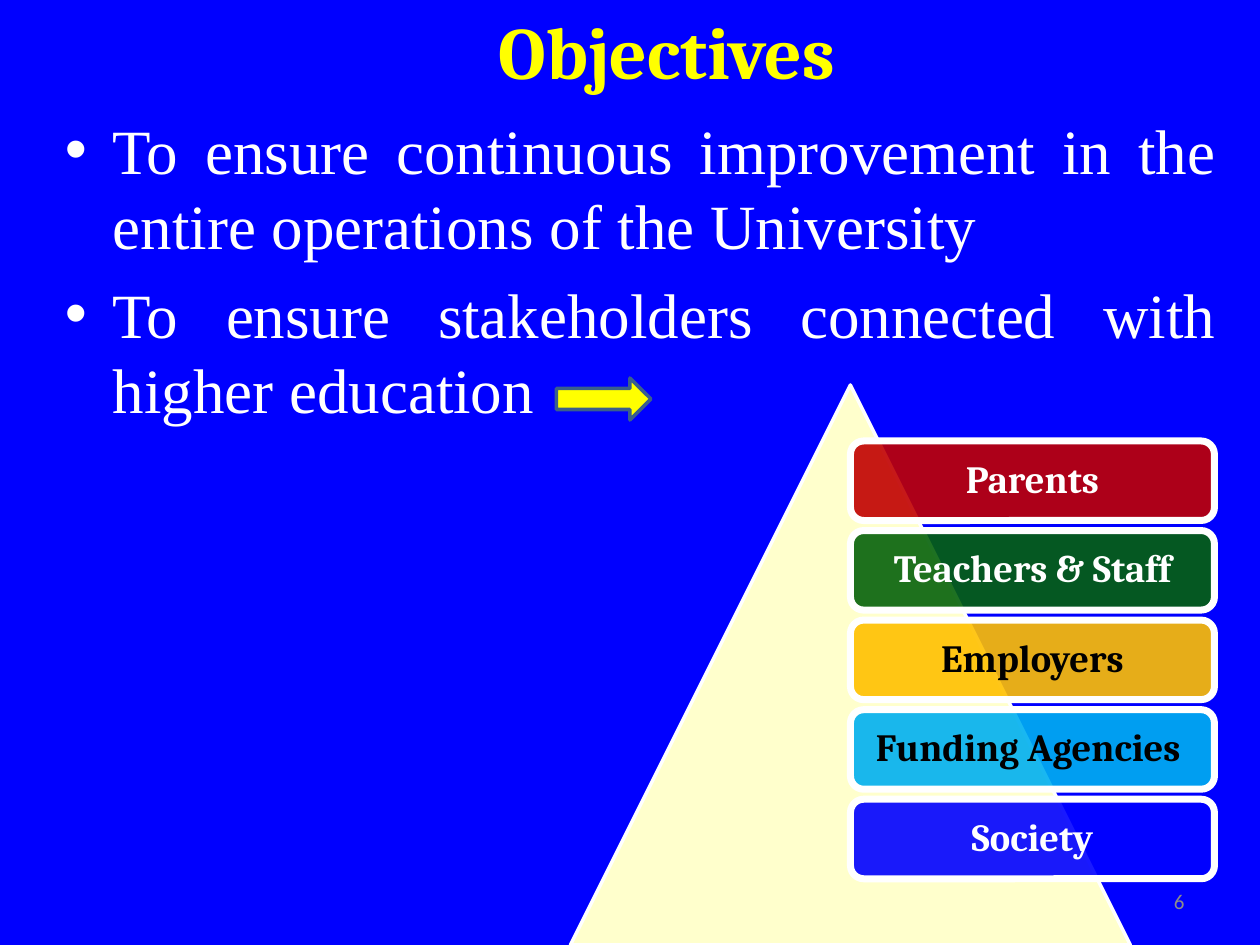
from pptx import Presentation
from pptx.dml.color import RGBColor
from pptx.enum.shapes import MSO_SHAPE as SHAPE
from pptx.enum.text import MSO_ANCHOR as ANCHOR, PP_ALIGN as ALIGN
from pptx.oxml.ns import qn
from pptx.util import Inches, Pt
from lxml.etree import SubElement

BLUE = RGBColor(0x00, 0x00, 0xFF)
WHITE = RGBColor(0xFF, 0xFF, 0xFF)
BLACK = RGBColor(0x00, 0x00, 0x00)
YELLOW = RGBColor(0xFF, 0xFF, 0x00)
CREAM = RGBColor(0xFF, 0xFF, 0xCC)
GREY = RGBColor(0x8C, 0x8C, 0x8C)
STEEL = RGBColor(0x3A, 0x5F, 0x8C)
RED = RGBColor(0xC0, 0x00, 0x00)
GREEN = RGBColor(0x06, 0x62, 0x0A)
AMBER = RGBColor(0xFF, 0xC0, 0x00)
SKY = RGBColor(0x00, 0xB0, 0xF0)

OBJECTIVES = [
    "To ensure continuous improvement in the entire operations of the University",
    "To ensure stakeholders connected with higher education ",
]
STAKEHOLDERS = [
    ("Parents", RED, WHITE),
    ("Teachers & Staff", GREEN, WHITE),
    ("Employers", AMBER, BLACK),
    ("Funding Agencies ", SKY, BLACK),
    ("Society", BLUE, WHITE),
]


class Deck:
    """Draws styled elements on a slide with a grid of 120 columns by 90 rows."""

    HEADING, BODY, SMALL = "Cambria", "Times New Roman", "Calibri"

    def __init__(self):
        self.prs = Presentation()
        self.prs.slide_width, self.prs.slide_height = Inches(10), Inches(7.5)
        self.s = None

    def new_slide(self, color):
        self.s = self.prs.slides.add_slide(self.prs.slide_layouts[6])
        fill = self.s.background.fill
        fill.solid()
        fill.fore_color.rgb = color

    def place(self, col, row, cols, rows):
        x, y = self.prs.slide_width / 120, self.prs.slide_height / 90
        return [round(v) for v in (col * x, row * y, cols * x, rows * y)]

    def run(self, p, text, font, size, color, align, bold=False):
        p.alignment = align
        r = p.add_run()
        r.text = text
        r.font.name, r.font.size, r.font.bold = font, Pt(size), bold
        r.font.color.rgb = color

    def text(self, box, text, font, size, color, align, bold=False, anchor=ANCHOR.TOP):
        tf = self.s.shapes.add_textbox(*self.place(*box)).text_frame
        tf.word_wrap, tf.vertical_anchor = True, anchor
        self.run(tf.paragraphs[0], text, font, size, color, align, bold)

    def bullets(self, box, items, size, color):
        tf = self.s.shapes.add_textbox(*self.place(*box)).text_frame
        tf.word_wrap = True
        for i, item in enumerate(items):
            p = tf.add_paragraph() if i else tf.paragraphs[0]
            self.run(p, item, self.BODY, size, color, ALIGN.JUSTIFY)
            pPr = p._p.get_or_add_pPr()
            pPr.set("marL", str(Inches(0.38)))
            pPr.set("indent", str(-Inches(0.38)))
            before = SubElement(pPr, qn("a:spcBef"))
            SubElement(before, qn("a:spcPct")).set("val", "20000")
            SubElement(pPr, qn("a:buFont")).set("typeface", "Arial")
            SubElement(pPr, qn("a:buChar")).set("char", "•")

    def shape(self, kind, box, fill, line, width):
        sp = self.s.shapes.add_shape(kind, *self.place(*box))
        sp.shadow.inherit = False
        sp.fill.solid()
        sp.fill.fore_color.rgb = fill
        sp.line.color.rgb, sp.line.width = line, Pt(width)
        return sp

    def card(self, box, text, fill, color):
        sp = self.shape(SHAPE.ROUNDED_RECTANGLE, box, fill, WHITE, 4)
        rgb = sp._element.spPr.find(qn("a:solidFill")).find(qn("a:srgbClr"))
        SubElement(rgb, qn("a:alpha")).set("val", "90000")
        tf = sp.text_frame
        tf.word_wrap, tf.vertical_anchor = True, ANCHOR.MIDDLE
        tf.margin_left = tf.margin_right = Inches(0.09)
        tf.margin_top = tf.margin_bottom = Inches(0.09)
        p = tf.paragraphs[0]
        p.line_spacing = 0.9
        self.run(p, text, self.HEADING, 22, color, ALIGN.CENTER, True)


def main():
    deck = Deck()
    deck.new_slide(BLUE)
    deck.bullets((5, 10, 112, 69), OBJECTIVES, 36, WHITE)
    deck.text((38, 0, 51, 9.75), "Objectives", deck.HEADING, 42, YELLOW, ALIGN.CENTER, True)
    deck.text((86, 83.4, 28, 4.8), "6", deck.SMALL, 12, GREY, ALIGN.RIGHT, anchor=ANCHOR.MIDDLE)
    deck.shape(SHAPE.ISOSCELES_TRIANGLE, (54.33, 36.67, 53.33, 53.33), CREAM, WHITE, 2)
    for i, (name, fill, color) in enumerate(STAKEHOLDERS):
        deck.card((81, 42 + 8.53 * i, 34.67, 7.58), name, fill, color)
    deck.shape(SHAPE.RIGHT_ARROW, (53, 36, 9, 4), YELLOW, STEEL, 2)
    deck.prs.save("out.pptx")


if __name__ == "__main__":
    main()
